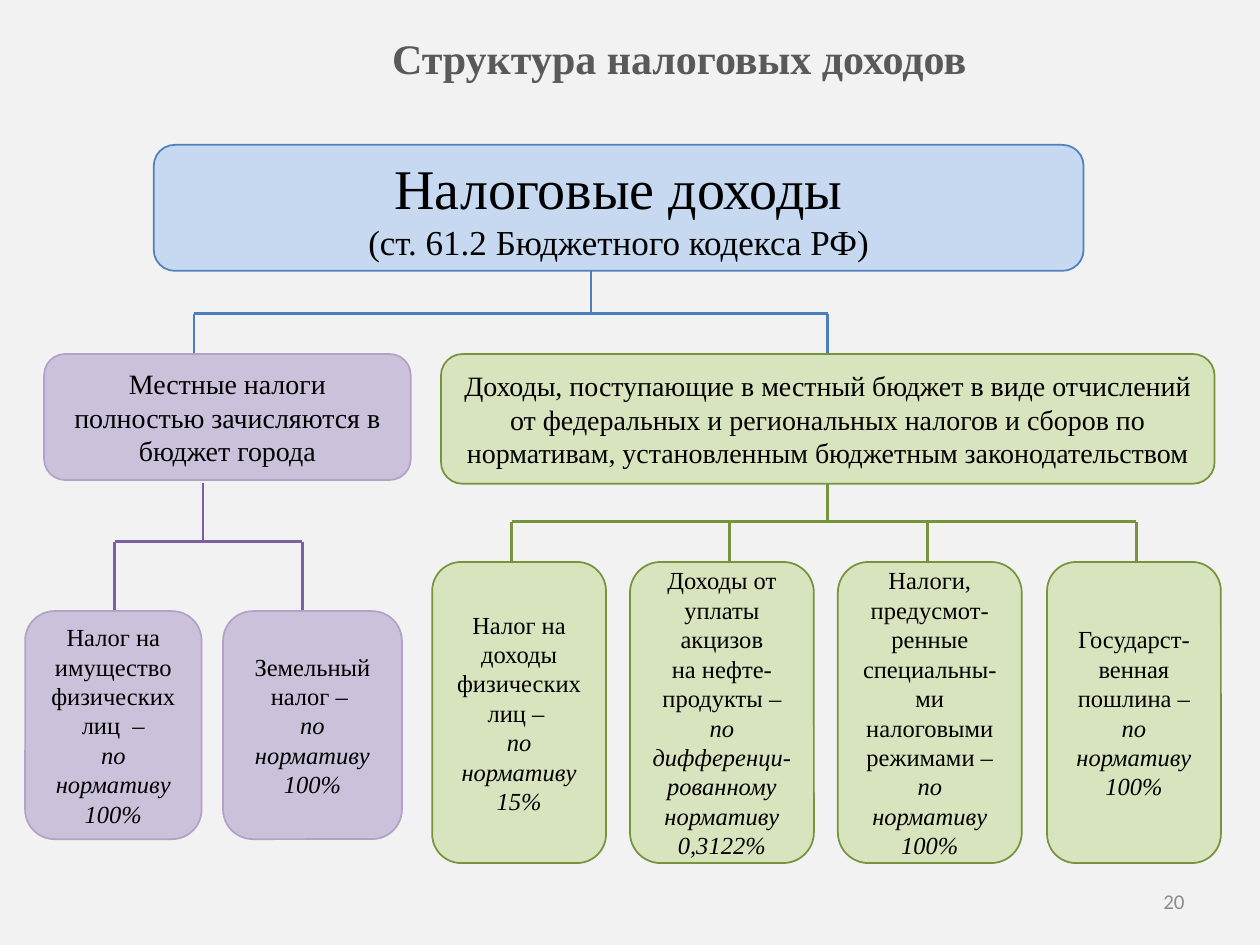
import pptx
import pptx.dml.color
import pptx.enum.shapes
import pptx.enum.text
import pptx.oxml.ns
import pptx.util
from lxml import etree
from pptx.util import Inches

SERIF = "Times New Roman"
ALIGN = pptx.enum.text.PP_ALIGN
ANCHOR = pptx.enum.text.MSO_ANCHOR

# Fill and outline of each branch
BLUE = ("C6D9F1", "4F81BD")
PURPLE = ("CCC1DA", "B3A2C7")
GREEN = ("D7E4BD", "77933C")


def color(hex_string):
    return pptx.dml.color.RGBColor.from_string(hex_string)


class Chart:
    """Holds the current slide and draws the parts of the diagram."""

    def __init__(self, slide):
        self.slide = slide
        background = slide.background.fill
        background.solid()
        background.fore_color.rgb = color("F2F2F2")

    def style(self, paragraph, size, ink="000000", font=SERIF, align=ALIGN.CENTER):
        paragraph.alignment = align
        paragraph.font.size = pptx.util.Pt(size)
        paragraph.font.name = font
        paragraph.font.color.rgb = color(ink)

    def title(self, text, left, top, width, height):
        title = self.slide.shapes.title
        title.left, title.top = Inches(left), Inches(top)
        title.width, title.height = Inches(width), Inches(height)
        title.text_frame.text = text
        title.text_frame.vertical_anchor = ANCHOR.TOP
        heading = title.text_frame.paragraphs[0]
        self.style(heading, 24, "595959")
        heading.font.bold = True

    def page_number(self, text, left, top, width, height):
        number = self.slide.shapes.add_textbox(
            Inches(left), Inches(top), Inches(width), Inches(height))
        number.text_frame.word_wrap = True
        number.text_frame.vertical_anchor = ANCHOR.MIDDLE
        number.text_frame.text = text
        self.style(number.text_frame.paragraphs[0], 12, "8C8C8C", "Calibri", ALIGN.RIGHT)

    def line(self, x1, y1, x2, y2, ink):
        line = self.slide.shapes.add_connector(
            pptx.enum.shapes.MSO_CONNECTOR.STRAIGHT,
            Inches(x1), Inches(y1), Inches(x2), Inches(y2))
        line.line.color.rgb = color(ink)
        line.line.width = pptx.util.Pt(1.5)
        properties = line._element.spPr
        etree.SubElement(properties, pptx.oxml.ns.qn("a:effectLst"))

    def bracket(self, trunk, legs, top, bar, bottom, ink):
        """A trunk from the parent, a crossbar, and a leg to each child."""
        self.line(trunk, top, trunk, bar, ink)
        self.line(legs[0], bar, legs[-1], bar, ink)
        for leg in legs:
            self.line(leg, bar, leg, bottom, ink)

    def box(self, left, top, width, height, palette, paragraphs):
        """Each paragraph is a size and its runs; a run starting with * is italic."""
        box = self.slide.shapes.add_shape(
            pptx.enum.shapes.MSO_SHAPE.ROUNDED_RECTANGLE,
            Inches(left), Inches(top), Inches(width), Inches(height))
        fill, outline = palette
        box.shadow.inherit = False
        box.fill.solid()
        box.fill.fore_color.rgb = color(fill)
        box.line.color.rgb = color(outline)
        box.line.width = pptx.util.Pt(1)
        frame = box.text_frame
        frame.word_wrap = True
        frame.vertical_anchor = ANCHOR.MIDDLE
        for index, (size, *runs) in enumerate(paragraphs):
            paragraph = frame.add_paragraph() if index else frame.paragraphs[0]
            self.style(paragraph, size)
            for text in runs:
                run = paragraph.add_run()
                run.text = text.lstrip("*")
                if text.startswith("*"):
                    run.font.italic = True


def main():
    presentation = pptx.Presentation()
    presentation.slide_width, presentation.slide_height = Inches(10), Inches(7.5)
    title_only = presentation.slide_layouts[5]
    chart = Chart(presentation.slides.add_slide(title_only))
    chart.title("Структура налоговых доходов", 1.14, 0.21, 8.5, 0.63)

    # Connecting lines
    chart.bracket(4.69, [1.54, 6.57], 2.1, 2.49, 2.8, "4B7EBC")
    chart.bracket(1.61, [0.91, 2.4], 3.83, 4.3, 4.89, "7D60A0")
    chart.bracket(6.57, [4.06, 5.79, 7.36, 9.02], 3.83, 4.14, 4.49, "77933C")

    # Total and its two branches
    chart.box(1.22, 1.15, 7.38, 1, BLUE, [
        (32, "Налоговые доходы"),
        (20, "(ст. 61.2 Бюджетного кодекса РФ)")])
    chart.box(0.35, 2.81, 2.91, 1, PURPLE, [
        (16, "Местные налоги"),
        (16, "полностью зачисляются в бюджет города")])
    chart.box(3.5, 2.81, 6.14, 1.03, GREEN, [
        (16, "Доходы, поступающие в местный бюджет в виде отчислений "
             "от федеральных и региональных налогов и сборов по нормативам, "
             "установленным бюджетным законодательством")])

    # Local taxes
    full_rate = "*по нормативу 100%"
    local_taxes = [
        (0.2, 1.4, [(14, "Налог на имущество физических лиц  –"), (14, full_rate)]),
        (1.77, 1.42, [(14, "Земельный налог – "), (14, full_rate)]),
    ]
    for left, width, text in local_taxes:
        chart.box(left, 4.85, width, 1.81, PURPLE, text)

    # Shares of federal and regional taxes
    shared_taxes = [
        (3.43, 1.38, [(14, "Налог на доходы физических лиц – "),
                      (14, "*по нормативу 15%")]),
        (5, 1.46, [(14, "Доходы от уплаты акцизов"),
                   (14, "на нефте-продукты – ", "*по дифференци-"),
                   (14, "*рованному нормативу 0,3122%")]),
        (6.65, 1.46, [(14, "Налоги, предусмот-ренные специальны-ми "
                           "налоговыми режимами – ", full_rate)]),
        (8.31, 1.38, [(14, "Государст-венная пошлина – ", full_rate)]),
    ]
    for left, width, text in shared_taxes:
        chart.box(left, 4.46, width, 2.39, GREEN, text)

    chart.page_number("20", 7.17, 6.95, 2.33, 0.4)
    presentation.save("out.pptx")


if __name__ == "__main__":
    main()
